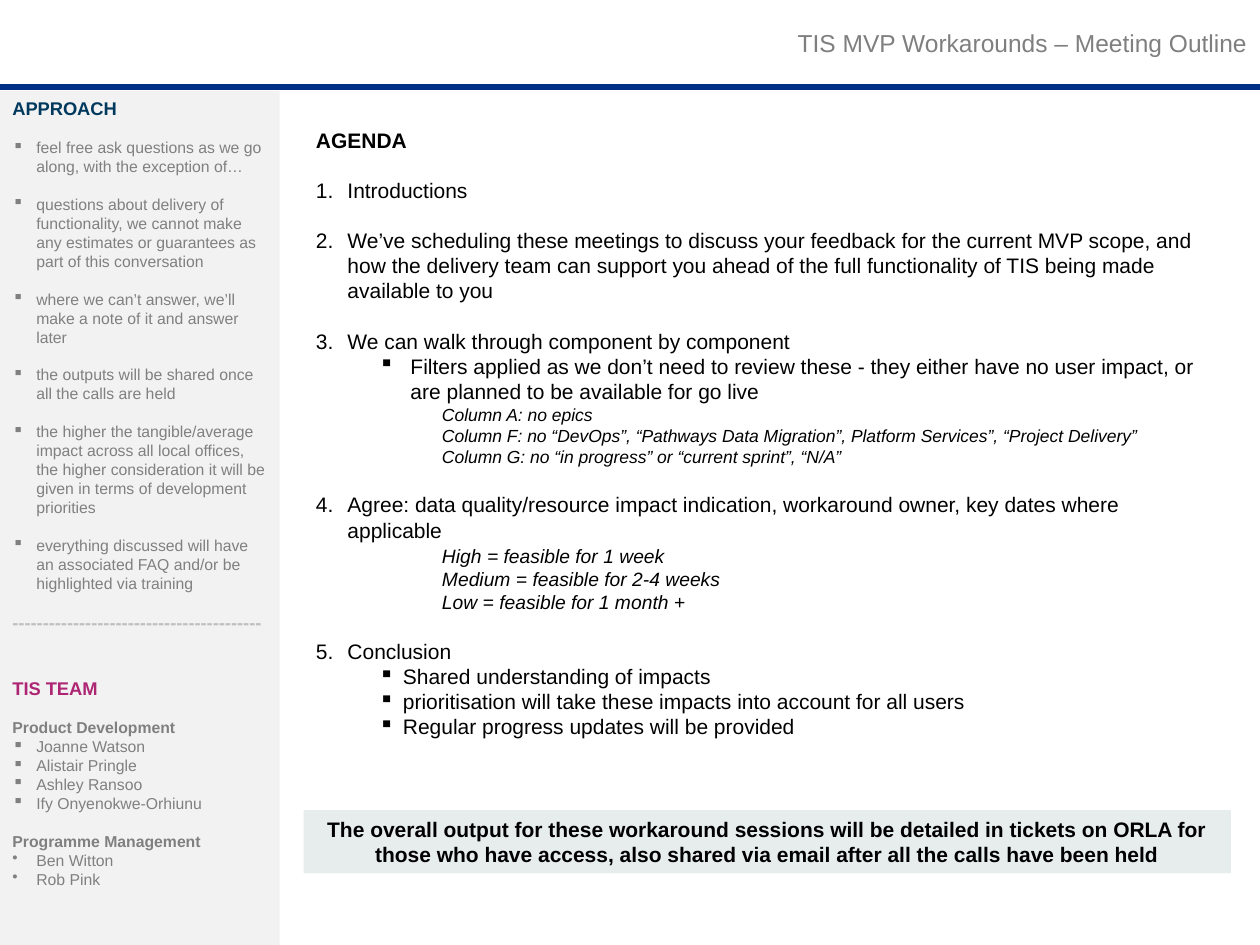
import pptx
import pptx.util
import pptx.dml.color
import pptx.enum.shapes
import pptx.enum.text
import pptx.oxml
from lxml import etree

Inches, Pt = pptx.util.Inches, pptx.util.Pt
ALIGN, ANCHOR = pptx.enum.text.PP_ALIGN, pptx.enum.text.MSO_ANCHOR
WIDE, HIGH = 10, 7.5
MAIN, SPAN = 2.41, 7.36  # left edge and width of the main column
SMALL, LARGE = 10.8, 14.3  # gaps of one line, in points

SIDE = {"size": 9, "ink": "808080"}
BODY = {"size": 12, "ink": "000000"}
ITEM = {**SIDE, "left": 0.19, "hang": 0.19}
NUMBER = {**BODY, "left": 0.25, "hang": 0.25}
NOTE = {**BODY, "left": 1, "italic": True}
STYLES = {
    "approach": {"size": 10.5, "ink": "00395D", "bold": True},
    "team": {"size": 10.5, "ink": "AD2573", "bold": True},
    "rule": {"size": 10.5, "ink": "BFBFBF", "bold": True},
    "group": {**SIDE, "bold": True},
    "square": {**ITEM, "mark": "▪"},
    "dot": {**ITEM, "mark": "•"},
    "head": {**BODY, "bold": True},
    "number": {**NUMBER, "start": 1},
    "fourth": {**NUMBER, "start": 4},
    "fifth": {**NUMBER, "start": 5},
    "filter": {**BODY, "left": 0.75, "hang": 0.25, "mark": "▪", "level": 1},
    "result": {**BODY, "left": 0.69, "hang": 0.19, "mark": "▪", "level": 1},
    "column": {**NOTE, "size": 10, "level": 2},
    "rating": {**NOTE, "size": 11},
    "callout": {**BODY, "bold": True, "align": ALIGN.CENTER},
    "title": {"size": 14, "ink": "7F7F7F", "align": ALIGN.RIGHT},
}

# Each row: style, text, gap before in points
SIDEBAR = [
    ("approach", "APPROACH", 0),
    ("square", "feel free ask questions as we go along, with the exception of…", SMALL),
    ("square", "questions about delivery of functionality, we cannot make any "
     "estimates or guarantees as part of this conversation", SMALL),
    ("square", "where we can’t answer, we’ll make a note of it and answer later", SMALL),
    ("square", "the outputs will be shared once all the calls are held", SMALL),
    ("square", "the higher the tangible/average impact across all local offices, "
     "the higher consideration it will be given in terms of development priorities", SMALL),
    ("square", "everything discussed will have an associated FAQ and/or be "
     "highlighted via training", SMALL),
    ("rule", "-----------------------------------------", SMALL),
    ("team", "TIS TEAM", 25),
    ("group", "Product Development", SMALL),
    ("square", "Joanne Watson", 0),
    ("square", "Alistair Pringle", 0),
    ("square", "Ashley Ransoo", 0),
    ("square", "Ify Onyenokwe-Orhiunu", 0),
    ("group", "Programme Management", SMALL),
    ("dot", "Ben Witton", 0),
    ("dot", "Rob Pink", 0),
]
AGENDA = [
    ("head", "AGENDA", 0),
    ("number", "Introductions", LARGE),
    ("number", "We’ve scheduling these meetings to discuss your feedback for the "
     "current MVP scope, and how the delivery team can support you ahead of the "
     "full functionality of TIS being made available to you", LARGE),
    ("number", "We can walk through component by component", LARGE),
    ("filter", "Filters applied as we don’t need to review these - they either have "
     "no user impact, or are planned to be available for go live", 0),
    ("column", "Column A: no epics", 0),
    ("column", "Column F: no “DevOps”, “Pathways Data Migration”, Platform Services”, "
     "“Project Delivery”", 0),
    ("column", "Column G: no “in progress” or “current sprint”, “N/A”", 0),
    ("fourth", "Agree: data quality/resource impact indication, workaround owner, "
     "key dates where applicable", LARGE),
    ("rating", "High = feasible for 1 week", 1),
    ("rating", "Medium = feasible for 2-4 weeks", 0),
    ("rating", "Low = feasible for 1 month +", 0),
    ("fifth", "Conclusion", LARGE),
    ("result", "Shared understanding of impacts", 0),
    ("result", "prioritisation will take these impacts into account for all users", 0),
    ("result", "Regular progress updates will be provided", 0),
]
CALLOUT = [("callout", "The overall output for these workaround sessions will be "
            "detailed in tickets on ORLA for those who have access, also shared via "
            "email after all the calls have been held", 0)]
TITLE = [("title", "TIS MVP Workarounds – Meeting Outline", 0)]


def color(code):
    return pptx.dml.color.RGBColor.from_string(code)


def add_bullet(para, style):
    """Set the indent and the bullet or number of a paragraph."""
    props = para._p.get_or_add_pPr()
    props.set("marL", str(Inches(style.get("left", 0))))
    props.set("indent", str(-Inches(style.get("hang", 0))))
    if "mark" in style:
        tag, values = "a:buChar", {"char": style["mark"]}
    elif "start" in style:
        tag, values = "a:buAutoNum", {"type": "arabicPeriod"}
        if style["start"] > 1:
            values["startAt"] = str(style["start"])
    else:
        tag, values = "a:buNone", {}
    etree.SubElement(props, pptx.oxml.ns.qn(tag), values)


def write(shape, rows, anchor=ANCHOR.TOP):
    frame = shape.text_frame
    layout = {"word_wrap": True, "vertical_anchor": anchor,
              "margin_left": Inches(0.1), "margin_right": Inches(0.1),
              "margin_top": Inches(0.05), "margin_bottom": Inches(0.05)}
    for key, value in layout.items():
        setattr(frame, key, value)
    for index, (name, text, gap) in enumerate(rows):
        style = STYLES[name]
        para = frame.add_paragraph() if index else frame.paragraphs[0]
        add_bullet(para, style)
        form = {"level": style.get("level", 0), "space_before": Pt(gap),
                "alignment": style.get("align", ALIGN.LEFT)}
        for key, value in form.items():
            setattr(para, key, value)
        run = para.add_run()
        run.text = text
        face = {"name": "Arial", "size": Pt(style["size"]),
                "bold": style.get("bold", False),
                "italic": style.get("italic", False)}
        for key, value in face.items():
            setattr(run.font, key, value)
        run.font.color.rgb = color(style["ink"])


def add_panel(slide, box, fill):
    panel = slide.shapes.add_shape(
        pptx.enum.shapes.MSO_SHAPE.RECTANGLE, *map(Inches, box))
    panel.shadow.inherit = False
    panel.fill.solid()
    panel.fill.fore_color.rgb = color(fill)
    panel.line.fill.background()
    return panel


def add_rule(slide, top):
    """Draw a line across the whole slide."""
    rule = slide.shapes.add_connector(
        pptx.enum.shapes.MSO_CONNECTOR.STRAIGHT,
        0, Inches(top), Inches(WIDE), Inches(top))
    rule.line.color.rgb = color("003086")
    rule.line.width = Pt(3)
    etree.SubElement(rule._element.spPr, pptx.oxml.ns.qn("a:effectLst"))


def place_title(slide):
    title = slide.shapes.title
    box = {"left": WIDE / 2, "top": 0.17, "width": WIDE / 2, "height": 0.34}
    for key, value in box.items():
        setattr(title, key, Inches(value))
    write(title, TITLE, ANCHOR.MIDDLE)


def main():
    deck = pptx.Presentation()
    deck.slide_width, deck.slide_height = Inches(WIDE), Inches(HIGH)
    slide = deck.slides.add_slide(deck.slide_layouts[5])
    add_rule(slide, 0.69)
    write(add_panel(slide, (0, 0.72, 2.22, HIGH - 0.72), "F2F2F2"), SIDEBAR)
    place_title(slide)
    write(add_panel(slide, (MAIN, 6.43, SPAN, 0.5), "E7ECED"), CALLOUT, ANCHOR.MIDDLE)
    agenda = slide.shapes.add_textbox(*map(Inches, (MAIN, 0.96, SPAN, 4.81)))
    write(agenda, AGENDA)
    deck.save("out.pptx")


if __name__ == "__main__":
    main()
